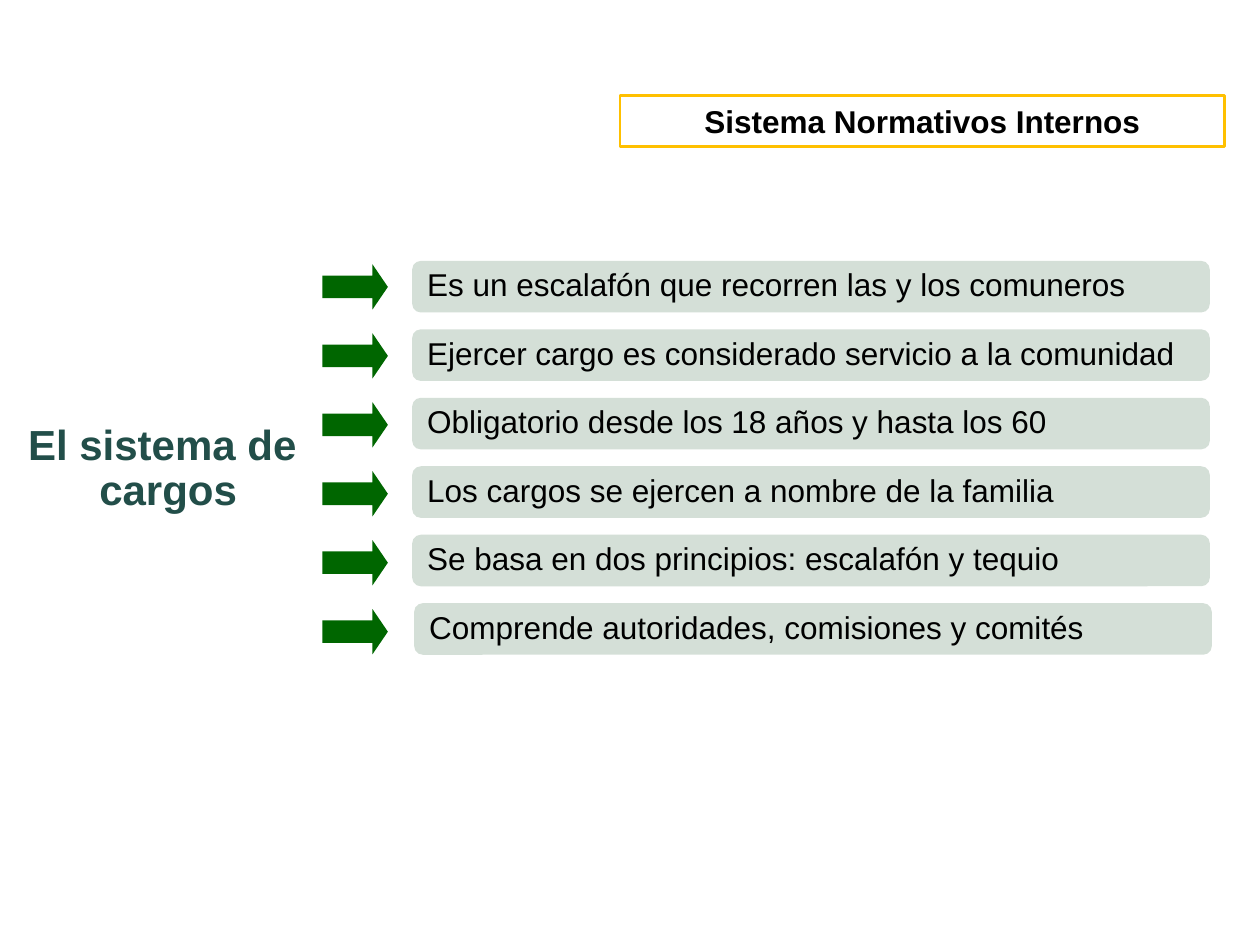
import dataclasses

import pptx
import pptx.dml.color
import pptx.enum.shapes
import pptx.enum.text
import pptx.oxml
import pptx.oxml.ns
import pptx.util

Cm = pptx.util.Cm
Align = pptx.enum.text.PP_ALIGN
Anchor = pptx.enum.text.MSO_ANCHOR
Shape = pptx.enum.shapes.MSO_SHAPE


@dataclasses.dataclass(frozen=True)
class Theme:
    font: str = "Arial"
    text: str = "000000"
    heading: str = "224E49"
    border: str = "FFC000"
    bar: str = "1E582C"
    bar_opacity: int = 19
    arrow: str = "006600"
    body_size: int = 18
    heading_size: int = 24


THEME = Theme()

POINTS = [
    "Es un escalafón que recorren las y los comuneros",
    "Ejercer cargo es considerado servicio a la comunidad",
    "Obligatorio desde los 18 años y hasta los 60",
    "Los cargos se ejercen a nombre de la familia",
    "Se basa en dos principios: escalafón y tequio",
    "Comprende autoridades, comisiones y comités",
]


def rgb(value):
    return pptx.dml.color.RGBColor.from_string(value)


def write_text(shape, lines, *, size=THEME.body_size, color=THEME.text, bold=False,
               align=Align.CENTER, anchor=Anchor.TOP, spacing=1.0, wrap=True):
    frame = shape.text_frame
    frame.word_wrap = wrap
    frame.auto_size = pptx.enum.text.MSO_AUTO_SIZE.SHAPE_TO_FIT_TEXT
    frame.vertical_anchor = anchor
    frame.text = "\n".join(lines)
    for paragraph in frame.paragraphs:
        paragraph.alignment = align
        paragraph.line_spacing = spacing
        for run in paragraph.runs:
            run.font.name = THEME.font
            run.font.size = pptx.util.Pt(size)
            run.font.bold = bold
            run.font.color.rgb = rgb(color)


def add_box(slide, kind, box, *, fill=None, opacity=100, line=None):
    shape = slide.shapes.add_shape(kind, *(Cm(length) for length in box))
    shape.shadow.inherit = False
    if fill:
        shape.fill.solid()
        shape.fill.fore_color.rgb = rgb(fill)
        if opacity < 100:
            color = shape.fill._xPr.find(".//" + pptx.oxml.ns.qn("a:srgbClr"))
            color.append(pptx.oxml.parse_xml(
                f'<a:alpha {pptx.oxml.ns.nsdecls("a")} val="{opacity * 1000}"/>'))
    else:
        shape.fill.background()
    if line:
        shape.line.color.rgb = rgb(line)
        shape.line.width = pptx.util.Pt(1.5)
    else:
        shape.line.fill.background()
    return shape


def add_title(slide, box):
    shape = add_box(slide, Shape.RECTANGLE, box, line=THEME.border)
    write_text(shape, ["Sistema Normativos Internos"], bold=True)


def add_heading(slide, box):
    shape = slide.shapes.add_textbox(*(Cm(length) for length in box))
    write_text(shape, ["El sistema de ", "cargos"], size=THEME.heading_size,
               color=THEME.heading, bold=True, spacing=0.9, wrap=False)


def add_points(slide, box, points):
    left, top, width, height = box
    bar_offset, bar_height = 1.81, 1.04
    arrow_width, arrow_height, arrow_inset = 1.32, 0.91, 0.07
    bar_pitch = (height - bar_height) / (len(points) - 1)
    arrow_pitch = bar_pitch + 0.01
    for index, point in enumerate(points):
        # The last bar sits slightly to the right
        shift = 0.04 if index == len(points) - 1 else 0
        bar = add_box(slide, Shape.ROUNDED_RECTANGLE,
                      (left + bar_offset + shift, top + index * bar_pitch,
                       width - bar_offset, bar_height),
                      fill=THEME.bar, opacity=THEME.bar_opacity)
        write_text(bar, [point], align=Align.JUSTIFY, anchor=Anchor.MIDDLE, spacing=0.9)
        arrow = add_box(slide, Shape.RIGHT_ARROW,
                        (left, top + arrow_inset + index * arrow_pitch,
                         arrow_width, arrow_height), fill=THEME.arrow)
        arrow.adjustments[1] = 0.34


def main():
    presentation = pptx.Presentation()
    presentation.slide_width = Cm(25.4)
    presentation.slide_height = Cm(19.05)
    slide = presentation.slides.add_slide(presentation.slide_layouts[6])

    add_title(slide, (12.5, 1.93, 12.19, 1.02))
    add_heading(slide, (0.28, 8.43, 6.22, 2.11))
    add_points(slide, (6.5, 5.26, 17.89, 7.94), POINTS)

    presentation.save("out.pptx")


if __name__ == "__main__":
    main()
